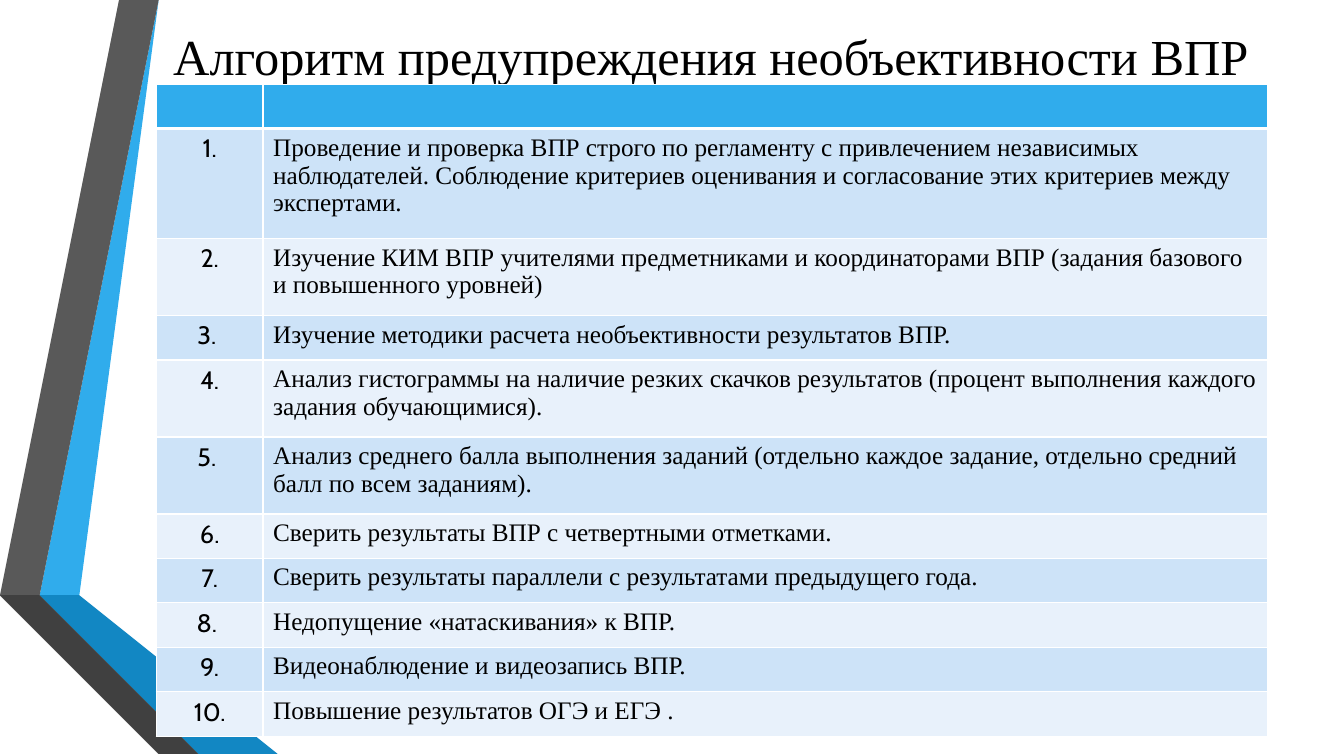
"""Build a slide with a ten-step table beside a folded ribbon."""
from dataclasses import dataclass

import pptx
import pptx.dml.color
import pptx.enum.text
import pptx.oxml
import pptx.oxml.ns
import pptx.util
from pptx.util import Cm


@dataclass(frozen=True)
class Theme:
    ink: str = "000000"
    white: str = "FFFFFF"
    blue: str = "30ACEC"
    deep: str = "1287C3"
    navy: str = "0C5A82"
    grey: str = "595959"
    coal: str = "404040"
    dark: str = "262626"
    bands: tuple = ("CDE3F8", "E8F1FB")
    serif: str = "Times New Roman"
    sans: str = "Cabin"
    head: int = 36
    body: int = 18


THEME = Theme()
ALIGN = pptx.enum.text.PP_ALIGN
WIDE, HIGH = 33.87, 19.05

RIBBON = [
    (THEME.blue, [(1.27, 14.68), (1.96, 14.81), (4.39, 0), (3.68, 0)]),
    (THEME.grey, [(3.53, 0), (2.82, 0), (0.41, 14.55), (1.12, 14.66)]),
    (THEME.dark, [(0.41, 14.55), (3.68, HIGH), (3.84, HIGH)]),
    (THEME.navy, [(1.27, 14.71), (5.28, HIGH), (5.44, HIGH)]),
    (THEME.deep, [(1.27, 14.68), (5.44, HIGH), (7.19, HIGH), (1.96, 14.81)]),
    (THEME.coal, [(5.13, HIGH), (1.22, 14.81), (1.12, 14.66),
                  (0.41, 14.55), (3.84, HIGH)]),
]

LOW, MID, TALL = 1.12, 1.94, 2.77
STEPS = [
    ("1.", "Проведение и проверка ВПР строго по регламенту с привлечением "
     "независимых наблюдателей. Соблюдение критериев оценивания и "
     "согласование этих критериев между экспертами.", TALL),
    ("2.", "Изучение КИМ ВПР учителями предметниками и координаторами ВПР "
     "(задания базового и повышенного уровней)", MID),
    ("3. ", "Изучение методики расчета необъективности результатов ВПР.", LOW),
    ("4.", "Анализ гистограммы на наличие резких скачков результатов "
     "(процент выполнения каждого задания обучающимися).", MID),
    ("5. ", "Анализ среднего балла выполнения заданий (отдельно каждое "
     "задание, отдельно средний балл по всем заданиям).", MID),
    ("6.", "Сверить результаты ВПР с четвертными отметками.", LOW),
    ("7.", "Сверить результаты параллели с результатами предыдущего года.", LOW),
    ("8. ", "Недопущение «натаскивания» к ВПР.", LOW),
    ("9.", "Видеонаблюдение и видеозапись ВПР.", LOW),
    ("10.", "Повышение результатов ОГЭ и ЕГЭ .", LOW),
]


def paint(fill, color):
    fill.solid()
    fill.fore_color.rgb = pptx.dml.color.RGBColor.from_string(color)


def write(frame, text, font=THEME.serif, size=THEME.body, color=THEME.ink,
          align=ALIGN.LEFT):
    para = frame.paragraphs[0]
    para.alignment = align
    run = para.add_run()
    run.text = text
    run.font.name = font
    run.font.size = pptx.util.Pt(size)
    paint(run.font.fill, color)


def add_band(slide, color, points):
    pen = slide.shapes.build_freeform(*points[0], scale=Cm(1))
    pen.add_line_segments(points[1:], close=True)
    band = pen.convert_to_shape()
    band.shadow.inherit = False
    paint(band.fill, color)
    band.line.fill.background()


def add_title(slide, text):
    title = slide.shapes.title
    title.left, title.top = Cm(4.11), Cm(0)
    title.width, title.height = Cm(28.65), Cm(2.79)
    frame = title.text_frame
    frame.word_wrap = True
    frame.auto_size = pptx.enum.text.MSO_AUTO_SIZE.NONE
    frame.vertical_anchor = pptx.enum.text.MSO_ANCHOR.MIDDLE
    write(frame, text, size=THEME.head)
    title.element.getparent().append(title.element)


def style(cell, color, base=1):
    props = cell._tc.get_or_add_tcPr()
    space = pptx.oxml.ns.nsdecls("a")
    for side, width in zip("LRTB", (1, 1, 1, base)):
        props.append(pptx.oxml.parse_xml(
            f'<a:ln{side} {space} w="{pptx.util.Pt(width)}"><a:solidFill>'
            f'<a:srgbClr val="{THEME.white}"/></a:solidFill></a:ln{side}>'))
    paint(cell.fill, color)


def add_steps(slide, steps):
    sizes = [LOW] + [step[2] for step in steps]
    cols = (2.69, 25.32)
    grid = slide.shapes.add_table(len(sizes), len(cols), Cm(3.94), Cm(2.12),
                                  Cm(sum(cols)), Cm(sum(sizes))).table
    grid.horz_banding = False
    for col, width in zip(grid.columns, cols):
        col.width = Cm(width)
    for row, height in zip(grid.rows, sizes):
        row.height = Cm(height)
    for cell in grid.rows[0].cells:
        style(cell, THEME.blue, base=3)
    for index, (mark, text, _) in enumerate(steps):
        left, right = grid.rows[index + 1].cells
        for cell in (left, right):
            style(cell, THEME.bands[index % 2], base=1)
        write(left.text_frame, mark, font=THEME.sans, align=ALIGN.CENTER)
        write(right.text_frame, text)
    for cell in grid.rows[1].cells:
        top = cell._tc.tcPr.find(pptx.oxml.ns.qn("a:lnT"))
        top.set("w", str(pptx.util.Pt(3)))


def main():
    deck = pptx.Presentation()
    deck.slide_width, deck.slide_height = Cm(WIDE), Cm(HIGH)
    slide = deck.slides.add_slide(deck.slide_layouts[5])
    paint(slide.background.fill, THEME.white)
    for color, points in RIBBON:
        add_band(slide, color, points)
    add_title(slide, "Алгоритм предупреждения необъективности ВПР")
    add_steps(slide, STEPS)
    deck.save("out.pptx")


if __name__ == "__main__":
    main()
